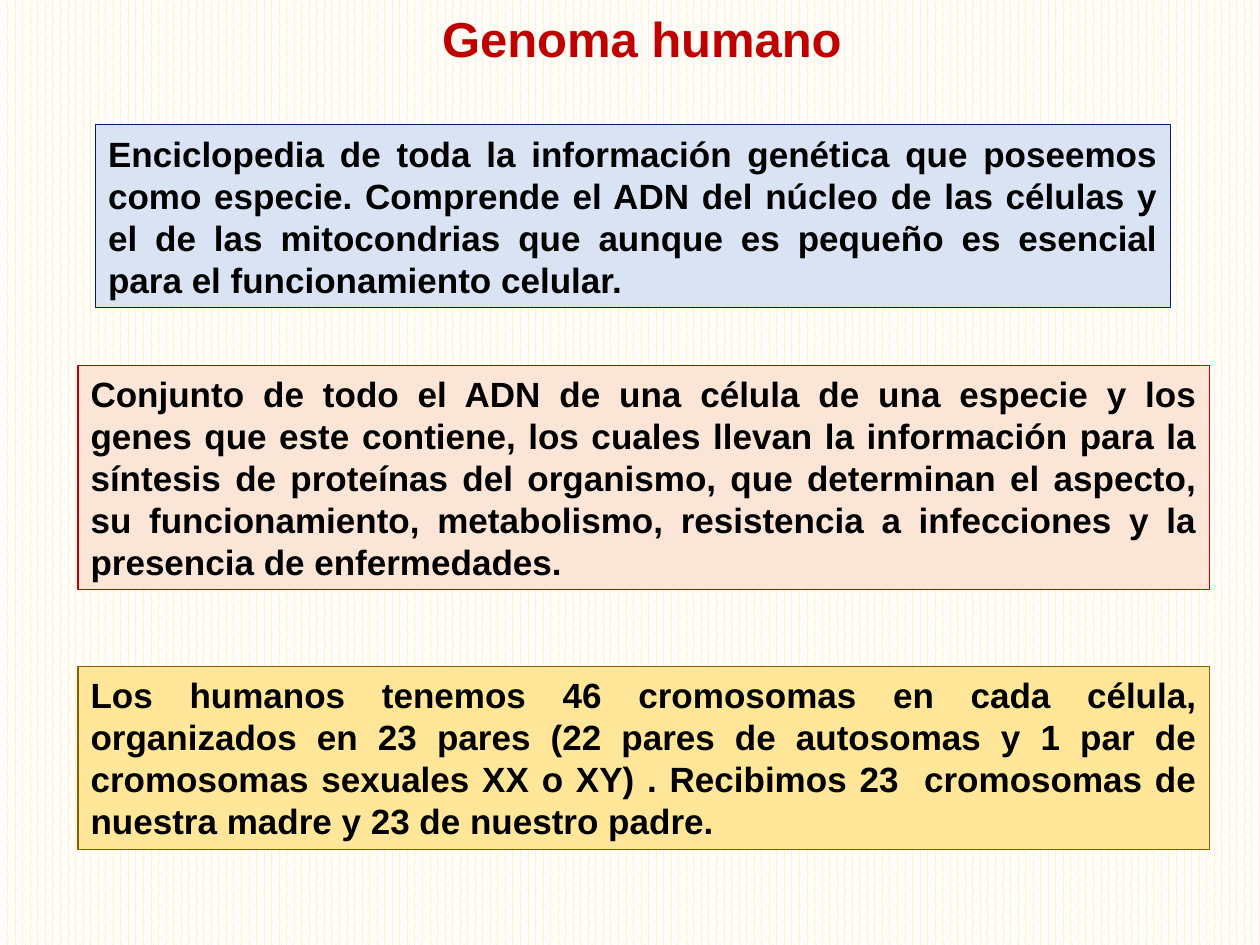
from pptx import Presentation
from pptx.dml.color import RGBColor
from pptx.enum.dml import MSO_PATTERN
from pptx.enum.shapes import MSO_SHAPE
from pptx.enum.text import MSO_AUTO_SIZE, PP_ALIGN
from pptx.util import Inches, Pt


def color(hex_string):
    return RGBColor.from_string(hex_string)


class SlideBuilder:
    font_name = "Arial"
    title_size = 28
    body_size = 20
    title_color = "C00000"
    body_color = "000000"
    border_width = 0.75

    def __init__(self, slide):
        self.slide = slide

    def background(self, foreground, background):
        fill = self.slide.background.fill
        fill.patterned()
        fill.pattern = MSO_PATTERN.PERCENT_60
        fill.fore_color.rgb = color(foreground)
        fill.back_color.rgb = color(background)

    def add_text(self, shape, text, size, text_color, alignment, wrap):
        frame = shape.text_frame
        frame.word_wrap = wrap
        frame.auto_size = MSO_AUTO_SIZE.SHAPE_TO_FIT_TEXT
        paragraph = frame.paragraphs[0]
        paragraph.alignment = alignment
        run = paragraph.add_run()
        run.text = text
        run.font.name = self.font_name
        run.font.size = Pt(size)
        run.font.bold = True
        run.font.color.rgb = color(text_color)

    def title(self, text, left, top, width, height):
        shape = self.slide.shapes.add_textbox(
            Inches(left), Inches(top), Inches(width), Inches(height))
        self.add_text(shape, text, self.title_size, self.title_color,
                      PP_ALIGN.LEFT, wrap=False)

    def panel(self, text, left, top, width, height, fill, border):
        shape = self.slide.shapes.add_shape(
            MSO_SHAPE.RECTANGLE,
            Inches(left), Inches(top), Inches(width), Inches(height))
        shape.shadow.inherit = False
        shape.fill.solid()
        shape.fill.fore_color.rgb = color(fill)
        shape.line.color.rgb = color(border)
        shape.line.width = Pt(self.border_width)
        self.add_text(shape, text, self.body_size, self.body_color,
                      PP_ALIGN.JUSTIFY, wrap=True)


def main():
    presentation = Presentation()
    presentation.slide_width = Inches(10)
    presentation.slide_height = Inches(7.5)
    builder = SlideBuilder(
        presentation.slides.add_slide(presentation.slide_layouts[6]))

    # Background and title
    builder.background("FFF2CC", "FFFFFF")
    builder.title("Genoma humano", 3.41, 0.02, 3.41, 0.57)

    # Definition of the genome
    builder.panel(
        "Enciclopedia de toda la información genética que poseemos como "
        "especie. Comprende el ADN del núcleo de las células y el de las "
        "mitocondrias que aunque es pequeño es esencial para el "
        "funcionamiento celular.",
        0.76, 0.99, 8.53, 1.45, "DAE3F3", "002060")

    # What the genes determine
    builder.panel(
        "Conjunto de todo el ADN de una célula de una especie y los genes "
        "que este contiene, los cuales llevan la información para la "
        "síntesis de proteínas del organismo, que determinan el aspecto, su "
        "funcionamiento, metabolismo, resistencia a infecciones y la "
        "presencia de enfermedades.",
        0.62, 2.9, 8.98, 1.78, "FBE5D6", "C00000")

    # Human chromosomes
    builder.panel(
        "Los humanos tenemos 46 cromosomas en cada célula, organizados en "
        "23 pares (22 pares de autosomas y 1 par de cromosomas sexuales XX "
        "o XY) . Recibimos 23  cromosomas de nuestra madre y 23 de nuestro "
        "padre.",
        0.62, 5.29, 8.98, 1.45, "FFE699", "806000")

    presentation.save("out.pptx")


if __name__ == "__main__":
    main()
